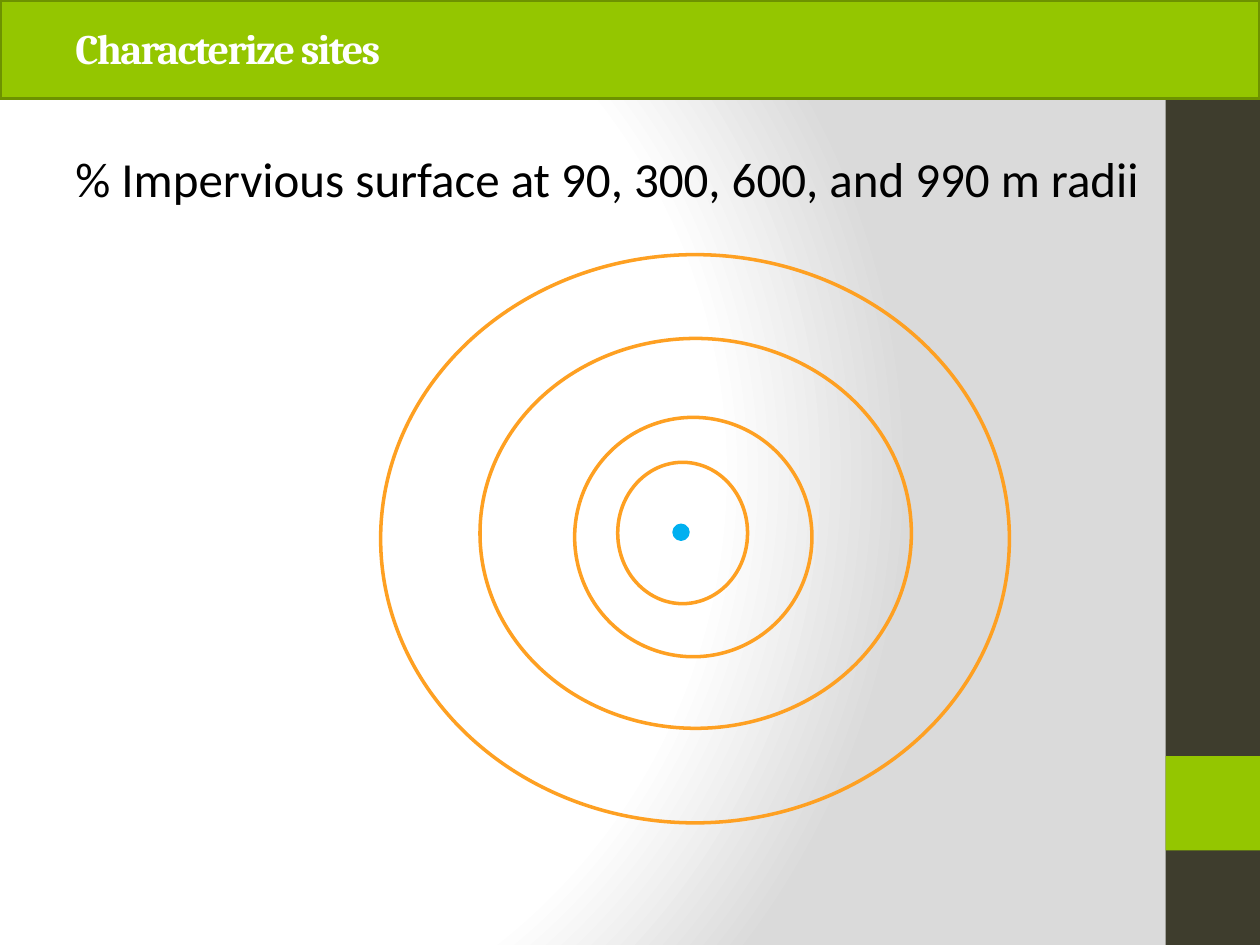
"""Build the site characterization slide with its sampling radii."""
from lxml import etree
from pptx import Presentation
from pptx.dml.color import RGBColor
from pptx.enum.shapes import MSO_SHAPE
from pptx.enum.text import MSO_ANCHOR
from pptx.util import Pt

RECT, OVAL = MSO_SHAPE.RECTANGLE, MSO_SHAPE.OVAL
TOP, MIDDLE = MSO_ANCHOR.TOP, MSO_ANCHOR.MIDDLE
GREEN, ORANGE, BLUE = "94C600", "FEA022", "00B0F0"
BACKGROUND = """
<p:bg xmlns:p="http://schemas.openxmlformats.org/presentationml/2006/main"
      xmlns:a="http://schemas.openxmlformats.org/drawingml/2006/main">
  <p:bgPr><a:gradFill rotWithShape="1"><a:gsLst>
    <a:gs pos="0"><a:srgbClr val="FFFFFF"/></a:gs>
    <a:gs pos="75000"><a:srgbClr val="FFFFFF"/></a:gs>
    <a:gs pos="100000"><a:srgbClr val="DADADA"/></a:gs>
  </a:gsLst><a:path path="circle">
    <a:fillToRect l="20000" t="50000" r="100000" b="50000"/>
  </a:path></a:gradFill><a:effectLst/></p:bgPr>
</p:bg>"""


def rgb(color):
    return RGBColor.from_string(color)


def add_shape(shapes, kind, box, fill=None, line=None):
    sp = shapes.add_shape(kind, *map(Pt, box))
    sp.shadow.inherit = False
    if fill:
        sp.fill.solid()
        sp.fill.fore_color.rgb = rgb(fill)
    else:
        sp.fill.background()
    if line:
        sp.line.color.rgb = rgb(line)
        sp.line.width = Pt(2)
    else:
        sp.line.fill.background()


prs = Presentation()
prs.slide_width, prs.slide_height = Pt(720), Pt(540)
s = prs.slides.add_slide(prs.slide_layouts[6])
s.element.cSld.insert(0, etree.fromstring(BACKGROUND))

add_shape(s.shapes, RECT, (666, 0, 54, 540), "3E3D2D")
add_shape(s.shapes, RECT, (666, 432, 54, 54), GREEN)
add_shape(s.shapes, RECT, (0, 0, 720, 56.2), GREEN, "6D9200")

texts = [
    ("% Impervious surface at 90, 300, 600, and 990 m radii",
     (36, 81.4, 624.2, 374.4), TOP, "Calibri", 28, "000000", False, 0),
    ("Characterize sites",
     (36, -18, 600, 90), MIDDLE, "Cambria", 24, "FFFFFF", True, -100),
]
for text, box, anchor, font, size, color, bold, spacing in texts:
    tf = s.shapes.add_textbox(*map(Pt, box)).text_frame
    tf.word_wrap = True
    tf.vertical_anchor = anchor
    p = tf.paragraphs[0]
    r = p.add_run()
    r.text = text
    r.font.name, r.font.size, r.font.bold = font, Pt(size), bold
    r.font.color.rgb = rgb(color)
    r.font._element.set("spc", str(spacing))

radii = s.shapes.add_group_shape()
rings = [
    ((274.3, 193.4, 246.5, 222.8), None, ORANGE),
    ((328.4, 238.5, 135.6, 136.8), None, ORANGE),
    ((353, 264.2, 74.2, 80.8), None, ORANGE),
    ((385.2, 300.2, 7.9, 7.9), BLUE, BLUE),
    ((217.5, 145.5, 359.3, 324.7), None, ORANGE),
]
for box, fill, line in rings:
    add_shape(radii.shapes, OVAL, box, fill, line)

prs.save("out.pptx")
